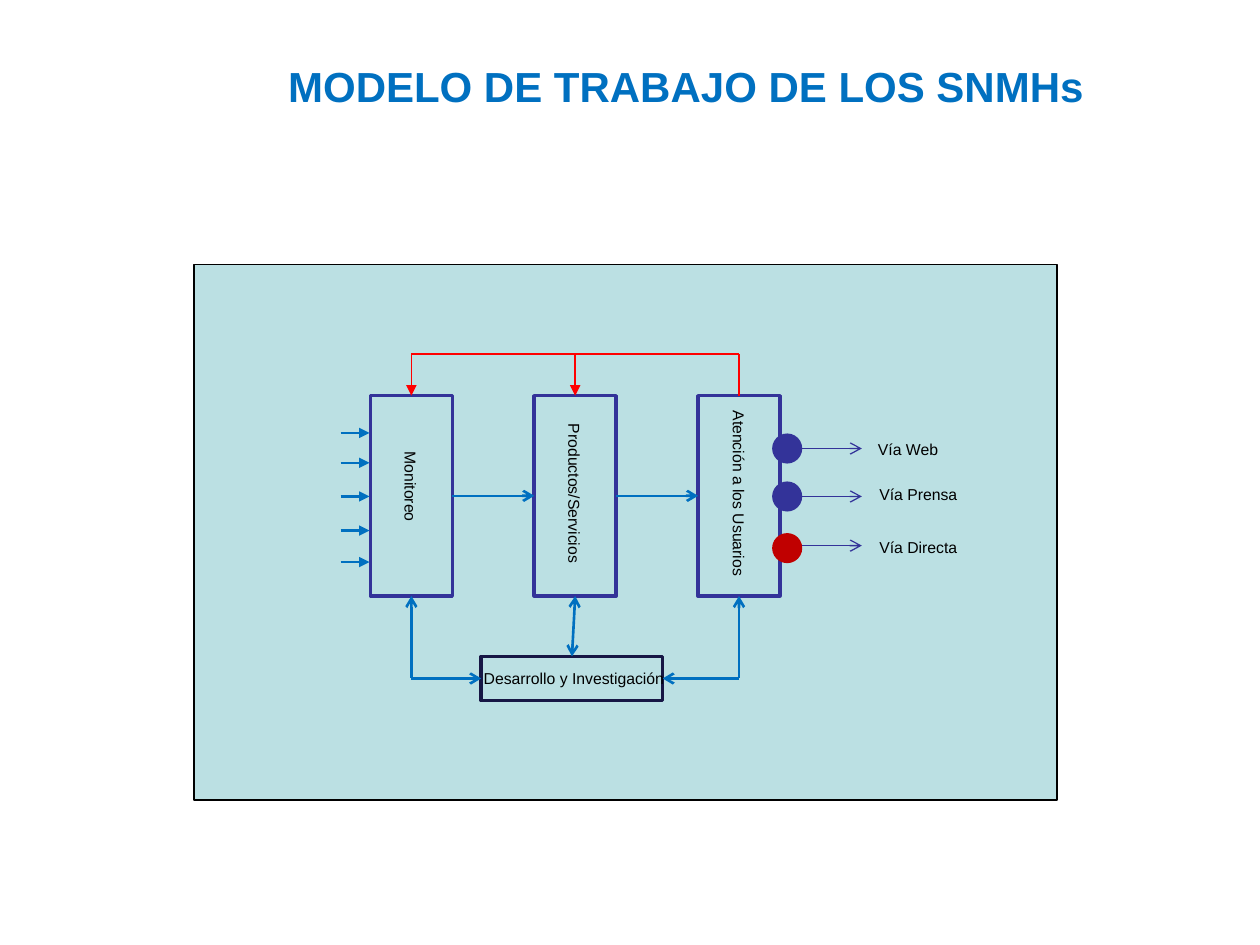
import pptx
import pptx.util
import pptx.dml.color
import pptx.enum.shapes
import pptx.enum.text
import pptx.oxml.xmlchemy

Pt = pptx.util.Pt
Shape = pptx.enum.shapes.MSO_SHAPE
Fit = pptx.enum.text.MSO_AUTO_SIZE
Node = pptx.oxml.xmlchemy.OxmlElement

THEME = {
    "font": "Arial", "head": 24, "body": 9,
    "panel": "BBE0E3", "blue": "0070C0", "navy": "333399", "dark": "171745",
    "red": "FF0000", "deep": "C00000", "black": "000000",
    "thick": 2, "flow": 1.5, "loop": 1, "thin": 0.75,
}
TITLE = "MODELO DE TRABAJO DE LOS SNMHs"
STAGES = [
    ("Monitoreo", 234.7, 278.3, 54.7),
    ("Productos/Servicios", 328.3, 282.6, 95),
    ("Atención a los Usuarios", 422.3, 282.6, 110.2),
]
ROUTES = [
    ("Vía Web", 494.6, 247.7, 49.7, 256.3, 256.3, "navy"),
    ("Vía Prensa", 495.4, 273.6, 59.8, 283.7, 283.7, "navy"),
    ("Vía Directa", 495.4, 303.8, 59.8, 313.2, 311.8, "deep"),
]
INPUTS = [247.4, 264.5, 283.7, 303.2, 321.2]
BASE = "Desarrollo y Investigación"

LEFT, TOP, WIDE, HIGH, STEP = 211.7, 226.1, 46.8, 114.5, 93.6
LOOP, LOW, DOT, LABEL = 202.3, 387.7, 17.2, 18

deck = pptx.Presentation()
deck.slide_width, deck.slide_height = Pt(720), Pt(540)
slide = deck.slides.add_slide(deck.slide_layouts[5])


def paint(name):
    return pptx.dml.color.RGBColor.from_string(THEME[name])


def style(frame, size, color, bold=False):
    for run in frame.paragraphs[0].runs:
        run.font.name = THEME["font"]
        run.font.size = Pt(THEME[size])
        run.font.bold = bold
        run.font.color.rgb = paint(color)


def block(kind, x, y, w, h, fill=None, edge=None, width="thick"):
    shape = slide.shapes.add_shape(kind, Pt(x), Pt(y), Pt(w), Pt(h))
    shape.shadow.inherit = False
    if fill:
        shape.fill.solid()
        shape.fill.fore_color.rgb = paint(fill)
    else:
        shape.fill.background()
    if edge:
        shape.line.color.rgb = paint(edge)
        shape.line.width = Pt(THEME[width])
    else:
        shape.line.fill.background()
    return shape


def label(text, x, y, w, turn=0):
    box = slide.shapes.add_textbox(Pt(x), Pt(y), Pt(w), Pt(LABEL))
    box.rotation = turn
    frame = box.text_frame
    frame.text = text
    frame.word_wrap = False
    frame.auto_size = Fit.SHAPE_TO_FIT_TEXT
    style(frame, "body", "black")


def link(start, end, color, width, head=None, tail=None, begin=None, finish=None):
    line = slide.shapes.add_connector(
        pptx.enum.shapes.MSO_CONNECTOR.STRAIGHT, *map(Pt, start + end))
    line.line.color.rgb = paint(color)
    line.line.width = Pt(THEME[width])
    for tag, kind in (("a:headEnd", head), ("a:tailEnd", tail)):
        if kind:
            tip = Node(tag)
            tip.set("type", kind)
            line.get_or_add_ln().append(tip)
    line._element.spPr.append(Node("a:effectLst"))
    if begin:
        line.begin_connect(*begin)
    if finish:
        line.end_connect(*finish)


block(Shape.RECTANGLE, 110.9, 151.2, 493.2, 306, "panel", "black", "thin")

title = slide.shapes.title
title.left, title.top, title.width, title.height = map(Pt, (149, 31, 486, 36))
frame = title.text_frame
frame.text = TITLE
frame.word_wrap = True
frame.auto_size = Fit.SHAPE_TO_FIT_TEXT
frame.vertical_anchor = pptx.enum.text.MSO_ANCHOR.MIDDLE
frame.paragraphs[0].alignment = pptx.enum.text.PP_ALIGN.CENTER
style(frame, "head", "blue", True)

boxes = [block(Shape.RECTANGLE, LEFT + i * STEP, TOP, WIDE, HIGH, edge="navy")
         for i in range(len(STAGES))]
mids = [LEFT + i * STEP + WIDE / 2 for i in range(len(STAGES))]
row, foot = TOP + HIGH / 2, TOP + HIGH

for i in range(len(boxes) - 1):
    link((mids[i] + WIDE / 2, row), (mids[i + 1] - WIDE / 2, row), "blue", "flow",
         tail="arrow", begin=(boxes[i], 3), finish=(boxes[i + 1], 1))
for text, x, y, w in STAGES:
    label(text, x - w / 2, y - LABEL / 2, w, 90)

for text, x, y, w, dot, ray, color in ROUTES:
    block(Shape.OVAL, 441.2, dot - DOT / 2, DOT, DOT, color)
    link((458.2, ray), (492.5, ray), "navy", "thin", tail="arrow")
    label(text, x, y, w)

for y in INPUTS:
    link((194.6, y), (211.2, y), "blue", "flow", tail="triangle")

base = block(Shape.RECTANGLE, 275, 375.1, 103.7, 25.2, edge="dark")
for i, side, edge in ((2, 3, 378.7), (0, 1, 275)):
    link((mids[i], foot), (mids[i], LOW), "blue", "flow", head="arrow",
         begin=(boxes[i], 2))
    link((mids[i], LOW), (edge, LOW), "blue", "flow", tail="arrow",
         finish=(base, side))
link((mids[1], foot), (326.9, 375.1), "blue", "flow", "arrow", "arrow",
     (boxes[1], 2), (base, 0))
label(BASE, 269.3, 378.7, 118.8)

link((mids[0], LOOP), (mids[2], LOOP), "red", "loop")
for box, x, tip in zip(boxes, mids, ("triangle", "triangle", None)):
    link((x, LOOP), (x, TOP), "red", "loop", tail=tip, finish=(box, 0))

deck.save("out.pptx")
